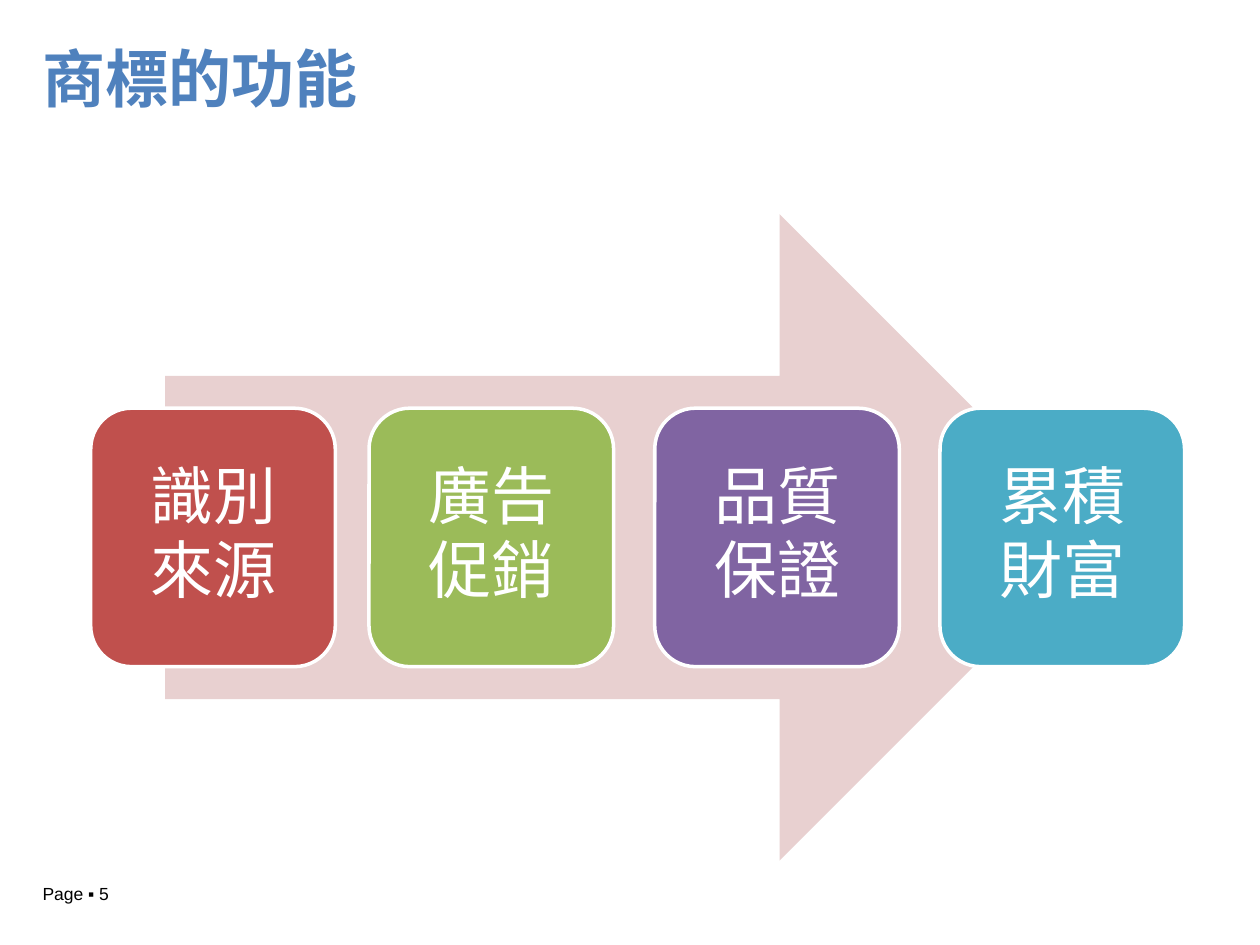
from lxml import etree
from pptx import Presentation
from pptx.dml.color import RGBColor
from pptx.enum.shapes import MSO_SHAPE
from pptx.enum.text import MSO_ANCHOR, PP_ALIGN
from pptx.oxml.ns import qn
from pptx.util import Cm, Pt

ARROW = MSO_SHAPE.RIGHT_ARROW
ROUNDED = MSO_SHAPE.ROUNDED_RECTANGLE
MIDDLE, TOP = MSO_ANCHOR.MIDDLE, MSO_ANCHOR.TOP
LEFT, CENTER = PP_ALIGN.LEFT, PP_ALIGN.CENTER

COLORS = {
    "title": "4F81BD", "arrow": "E8D0D0", "red": "C0504D", "green": "9BBB59",
    "purple": "8064A2", "teal": "4BACC6", "white": "FFFFFF", "black": "000000",
}
CJK = "Noto Sans CJK SC"

TITLE = "商標的功能"
PAGE_LABEL = "Page ▪ 5"
# left edge in cm, fill, lines of text
FUNCTIONS = [
    (1.83, "red", ["識別", "來源"]),
    (7.44, "green", ["廣告", "促銷"]),
    (13.2, "purple", ["品質", "保證"]),
    (18.95, "teal", ["累積", "財富"]),
]

# left, top, width, height in cm
TITLE_AREA = (0.86, 0.76, 23.67, 1.8)
PAGE_AREA = (0.61, 17.68, 3.73, 0.69)
ARROW_AREA = (3.33, 4.32, 18.9, 13.03)
CARD_TOP, CARD_WIDTH, CARD_HEIGHT = 8.23, 4.93, 5.21

TITLE_FONT = {"name": CJK, "size": Pt(36), "bold": True}
CARD_FONT = {"name": CJK, "size": Pt(36), "bold": False}
PAGE_FONT = {"name": "Arial", "size": Pt(10), "bold": False}
TITLE_PARA = {"alignment": LEFT, "line_spacing": 0.9}
CARD_PARA = {"alignment": CENTER, "line_spacing": Pt(36), "space_after": Pt(6)}
PAGE_PARA = {"alignment": LEFT}


def rgb(color):
    return RGBColor.from_string(COLORS[color])


def set_values(target, values):
    for name, value in values.items():
        setattr(target, name, value)


def write(box, lines, color, font, layout, anchor, insets):
    """Fill a box with one paragraph per line; insets are side and top in cm."""
    frame = box.text_frame
    side, top = map(Cm, insets)
    set_values(frame, {
        "word_wrap": True, "vertical_anchor": anchor, "margin_left": side,
        "margin_right": side, "margin_top": top, "margin_bottom": top,
    })
    for index, line in enumerate(lines):
        para = frame.add_paragraph() if index else frame.paragraphs[0]
        set_values(para, layout)
        span = para.add_run()
        span.text = line
        set_values(span.font, font)
        span.font.color.rgb = rgb(color)
        east_asian = etree.SubElement(span._r.get_or_add_rPr(), qn("a:ea"))
        east_asian.set("typeface", font["name"])


def add_filled(page, kind, area, fill):
    shape = page.shapes.add_shape(kind, *map(Cm, area))
    shape.shadow.inherit = False
    shape.fill.solid()
    shape.fill.fore_color.rgb = rgb(fill)
    shape.line.fill.background()
    return shape


def main():
    deck = Presentation()
    deck.slide_width, deck.slide_height = Cm(25.4), Cm(19.05)
    page = deck.slides.add_slide(deck.slide_layouts[6])

    page_box = page.shapes.add_textbox(*map(Cm, PAGE_AREA))
    write(page_box, [PAGE_LABEL], "black", PAGE_FONT, PAGE_PARA, TOP, (0.25, 0.13))
    title_box = page.shapes.add_textbox(*map(Cm, TITLE_AREA))
    write(title_box, [TITLE], "title", TITLE_FONT, TITLE_PARA, MIDDLE, (0, 0.13))

    add_filled(page, ARROW, ARROW_AREA, "arrow")
    for left, fill, lines in FUNCTIONS:
        card = add_filled(page, ROUNDED, (left, CARD_TOP, CARD_WIDTH, CARD_HEIGHT), fill)
        card.line.color.rgb = rgb("white")
        card.line.width = Pt(2)
        write(card, lines, "white", CARD_FONT, CARD_PARA, MIDDLE, (0.38, 0.38))

    deck.save("out.pptx")


if __name__ == "__main__":
    main()
